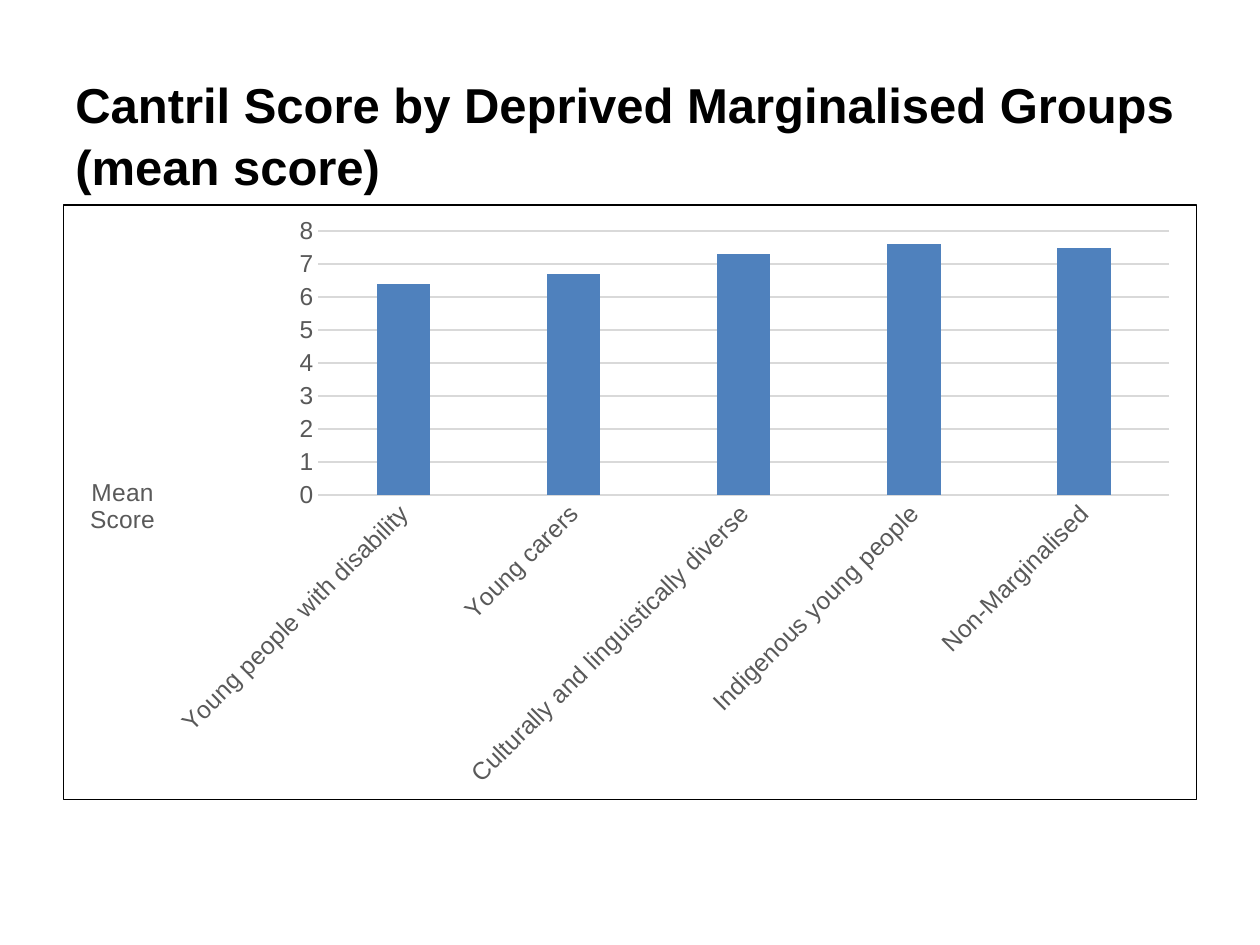
from lxml import etree
from pptx import Presentation, util as u
from pptx.chart.data import CategoryChartData
from pptx.dml.color import RGBColor
from pptx.enum import chart as ch, text
from pptx.oxml import parse_xml
from pptx.oxml.ns import nsdecls, qn

Pt = u.Pt


def color(code):
    return RGBColor.from_string(code)


def layout(**vals):
    """Manual chart layout, in fractions of the chart area."""
    root = parse_xml(f"<c:layout {nsdecls('c')}><c:manualLayout/></c:layout>")
    for key, val in vals.items():
        etree.SubElement(root[0], qn("c:" + key)).set("val", str(val))
    return root


deck = Presentation()
deck.slide_width, deck.slide_height = Pt(720), Pt(540)
slide = deck.slides.add_slide(deck.slide_layouts[6])

# Heading
head = slide.shapes.add_textbox(Pt(36), Pt(37.5), Pt(648), Pt(62.5)).text_frame
head.word_wrap = True
head.vertical_anchor = text.MSO_ANCHOR.TOP
para = head.paragraphs[0]
para.line_spacing = 1.05
run = para.add_run()
run.text = "Cantril Score by Deprived Marginalised Groups (mean score)"
run.font.name, run.font.size, run.font.bold = "Arial", Pt(28), True
run.font.color.rgb = color("000000")

# Chart
data = CategoryChartData()
data.categories = [
    "Young people with disability",
    "Young carers",
    "Culturally and linguistically diverse",
    "Indigenous young people",
    "Non-Marginalised",
]
data.add_series("Series 1", [6.4, 6.7, 7.3, 7.6, 7.5])
chart = slide.shapes.add_chart(
    ch.XL_CHART_TYPE.COLUMN_CLUSTERED,
    Pt(36), Pt(116.75), Pt(648), Pt(340.5), data).chart
chart.has_title = False
chart.has_legend = False
chart.font.name, chart.font.size = "Arial", Pt(14)
chart.font.color.rgb = color("000000")

plot = chart.plots[0]
plot.gap_width, plot.overlap = 219, -27
plot.vary_by_categories = False
fill = plot.series[0].format.fill
fill.solid()
fill.fore_color.rgb = color("4F81BD")

cats, vals = chart.category_axis, chart.value_axis
for axis in (cats, vals):
    axis.major_tick_mark = axis.minor_tick_mark = ch.XL_TICK_MARK.NONE
    font = axis.tick_labels.font
    font.name, font.size = "Arial", Pt(14)
    font.color.rgb = color("595959")

vals.minimum_scale, vals.maximum_scale, vals.major_unit = 0, 8, 1
vals.tick_labels.number_format = "#,##0"
vals.tick_labels.number_format_is_linked = False
vals.has_major_gridlines = True
vals.format.line.fill.background()
for line in (cats.format.line, vals.major_gridlines.format.line):
    line.color.rgb = color("D9D9D9")
    line.width = Pt(0.75)

# Slanted category labels
slant = cats._element.find(qn("c:txPr")).find(qn("a:bodyPr"))
slant.set("rot", "-2700000")
slant.set("vert", "horz")

# Level axis title, placed left of the plot
title = vals.axis_title
frame = title.text_frame
for i, word in enumerate(["Mean", "Score"]):
    para = frame.add_paragraph() if i else frame.paragraphs[0]
    para.alignment = text.PP_ALIGN.CENTER
    run = para.add_run()
    run.text = word
    run.font.name, run.font.size, run.font.bold = "Arial", Pt(14), False
    run.font.color.rgb = color("595959")
body = frame._txBody.find(qn("a:bodyPr"))
body.set("rot", "0")
body.set("vert", "horz")
root = title._element
for old in root.findall(qn("c:layout")):
    root.remove(old)
root.find(qn("c:tx")).addnext(
    layout(xMode="edge", yMode="edge", x=0.02, y=0.45))

# Plot position and outer border
area = chart._chartSpace.find(qn("c:chart")).find(qn("c:plotArea"))
for old in area.findall(qn("c:layout")):
    area.remove(old)
area.insert(0, layout(layoutTarget="inner", xMode="edge", yMode="edge",
                      x=0.225, y=0.044, w=0.751, h=0.444))
chart._chartSpace.find(qn("c:txPr")).addprevious(parse_xml(
    f"<c:spPr {nsdecls('c', 'a')}><a:noFill/><a:ln w='{Pt(0.75)}'><a:solidFill>"
    "<a:srgbClr val='000000'/></a:solidFill></a:ln></c:spPr>"))

deck.save("out.pptx")
